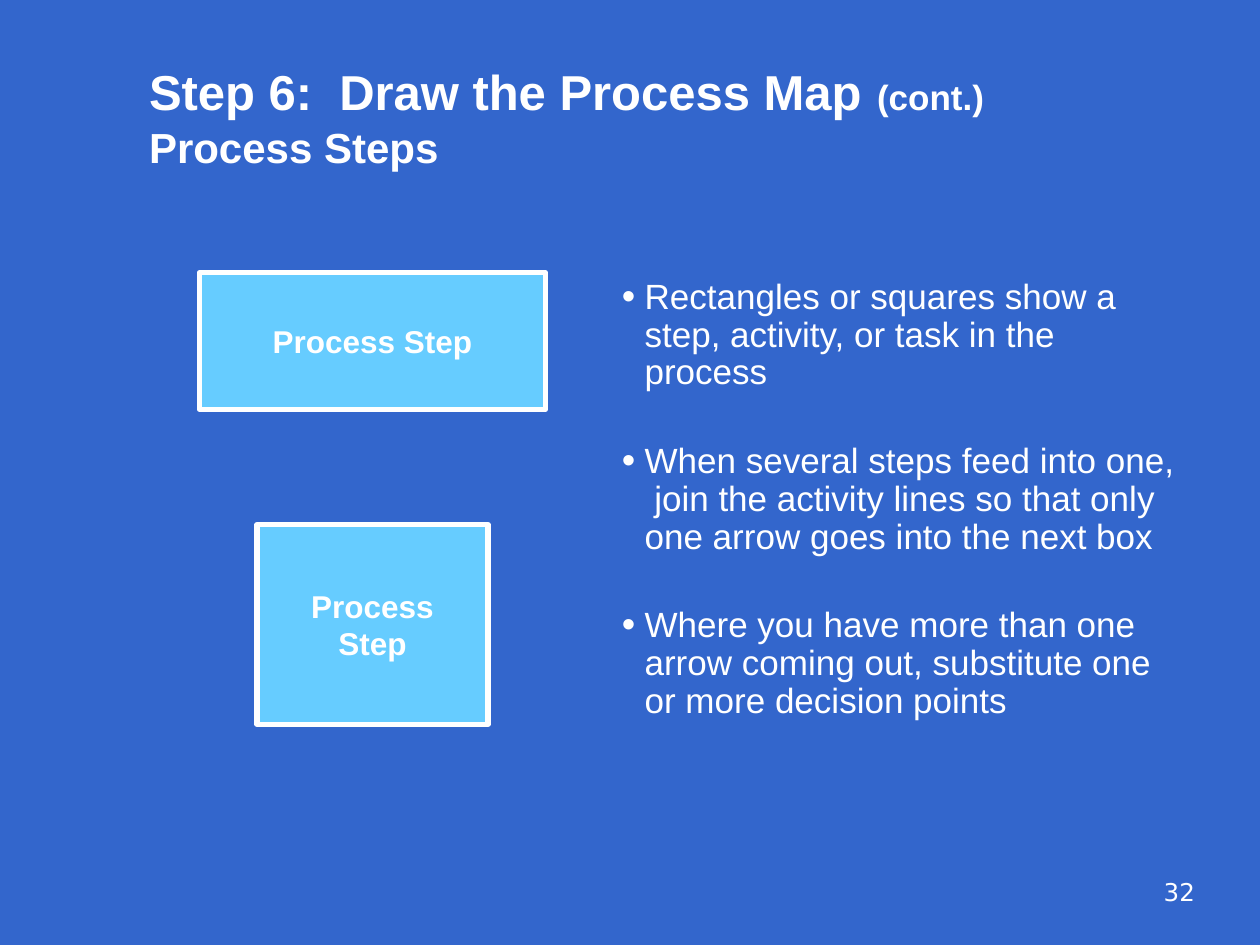
from lxml import etree
from pptx import Presentation
from pptx.dml.color import RGBColor
from pptx.enum.shapes import MSO_SHAPE
from pptx.enum.text import MSO_ANCHOR, MSO_AUTO_SIZE, PP_ALIGN
from pptx.oxml.ns import qn
from pptx.util import Cm, Pt

RECTANGLE = MSO_SHAPE.RECTANGLE
LEFT, CENTER, RIGHT = PP_ALIGN.LEFT, PP_ALIGN.CENTER, PP_ALIGN.RIGHT
TOP, MIDDLE, BOTTOM = MSO_ANCHOR.TOP, MSO_ANCHOR.MIDDLE, MSO_ANCHOR.BOTTOM
NO_AUTOFIT = MSO_AUTO_SIZE.NONE

BLUE, SKY, WHITE = "3366CC", "66CCFF", "FFFFFF"
GUIDELINES = [
    "Rectangles or squares show a step, activity, or task in the process",
    "When several steps feed into one,  join the activity lines so that only "
    "one arrow goes into the next box",
    "Where you have more than one arrow coming out, substitute one or more "
    "decision points",
]


def color(hex_string):
    return RGBColor.from_string(hex_string)


def style(paragraph, size, align=LEFT, bold=False, name="Arial"):
    paragraph.alignment = align
    font = paragraph.font
    font.name, font.size, font.bold = name, Pt(size), bold
    font.color.rgb = color(WHITE)


def place(shape, box):
    shape.left, shape.top, shape.width, shape.height = (Cm(v) for v in box)


def prepare_frame(shape, anchor):
    frame = shape.text_frame
    frame.word_wrap = True
    frame.auto_size = NO_AUTOFIT
    frame.vertical_anchor = anchor
    return frame


def add_bullet(paragraph):
    properties = paragraph._p.get_or_add_pPr()
    properties.set("marL", str(Cm(0.46)))
    properties.set("indent", str(Cm(-0.46)))
    bullet_color = etree.SubElement(properties, qn("a:buClr"))
    etree.SubElement(bullet_color, qn("a:srgbClr"), val=WHITE)
    etree.SubElement(properties, qn("a:buSzPct"), val="110000")
    etree.SubElement(properties, qn("a:buChar"), char="•")


def fill_title(title, box):
    place(title, box)
    heading = prepare_frame(title, BOTTOM).paragraphs[0]
    style(heading, 28, bold=True)

    def add_part(text, size):
        run = heading.add_run()
        run.text, run.font.size = text, Pt(size)

    add_part("Step 6:  Draw the Process Map", 28)
    add_part(" ", 32)
    add_part("(cont.)", 20)
    heading.add_line_break()
    add_part("Process Steps", 24)


def fill_guidelines(body, box):
    place(body, box)
    frame = prepare_frame(body, TOP)
    for index, guideline in enumerate(GUIDELINES):
        paragraph = frame.add_paragraph() if index else frame.paragraphs[0]
        paragraph.text = guideline
        paragraph.line_spacing = 0.9
        paragraph.space_before = Pt(29 if index else 0)
        add_bullet(paragraph)
        style(paragraph, 20)


def add_process_step(slide, box):
    step = slide.shapes.add_shape(RECTANGLE, *(Cm(v) for v in box))
    step.shadow.inherit = False
    step.fill.solid()
    step.fill.fore_color.rgb = color(SKY)
    step.line.color.rgb = color(WHITE)
    step.line.width = Pt(3)
    frame = prepare_frame(step, MIDDLE)
    frame.margin_left = frame.margin_right = Cm(0.6)
    label = frame.paragraphs[0]
    label.text = "Process Step"
    style(label, 18, CENTER, bold=True)


def add_page_number(slide, box):
    number_box = slide.shapes.add_textbox(*(Cm(v) for v in box))
    number = prepare_frame(number_box, TOP).paragraphs[0]
    number.text = "32"
    style(number, 14, RIGHT, name="DejaVu Sans")


def main():
    deck = Presentation()
    deck.slide_width, deck.slide_height = Cm(25.4), Cm(19.05)
    slide = deck.slides.add_slide(deck.slide_layouts[1])
    slide.background.fill.solid()
    slide.background.fill.fore_color.rgb = color(BLUE)

    # Title and list
    fill_title(slide.shapes.title, (2.75, 0.42, 21.59, 3.18))
    fill_guidelines(slide.placeholders[1], (12.28, 5.5, 11.72, 9.74))

    # Wide and square examples, centred on one axis
    axis = 7.51
    for top, width, height in ((5.5, 6.98, 2.75), (10.58, 4.66, 4.02)):
        add_process_step(slide, (axis - width / 2, top, width, height))

    # Page number
    add_page_number(slide, (19.05, 17.55, 5.29, 1.27))
    deck.save("out.pptx")


if __name__ == "__main__":
    main()
